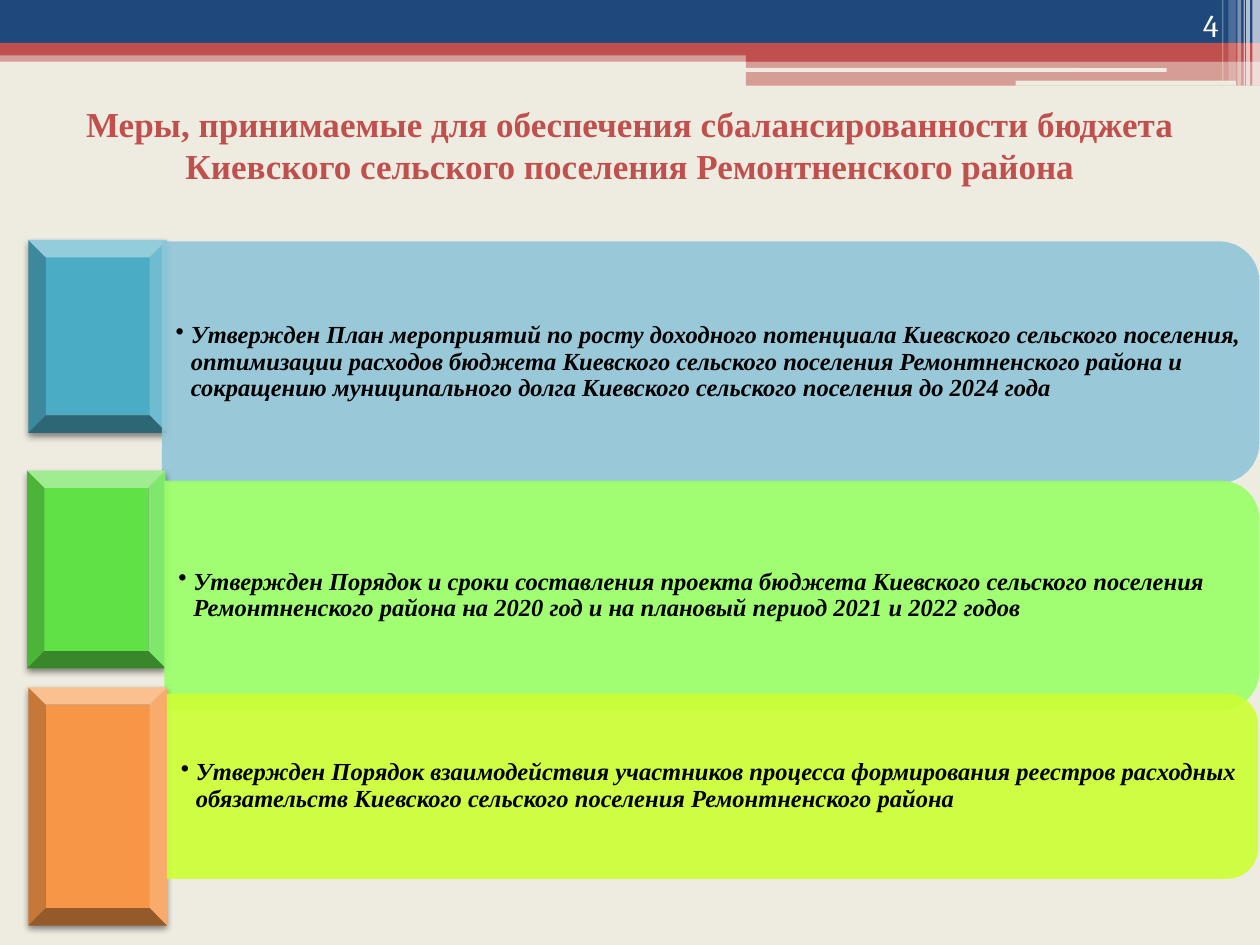
"""Build the slide on measures that keep the settlement budget balanced."""
from dataclasses import dataclass
from typing import NamedTuple

from lxml import etree
from pptx import Presentation
from pptx import util as u
from pptx.dml.color import RGBColor
from pptx.enum import shapes, text
from pptx.oxml import ns

COLUMNS, ROWS = 100, 75
SLIDE_WIDTH, SLIDE_HEIGHT = u.Inches(10), u.Inches(7.5)
Kind = shapes.MSO_SHAPE


class Area(NamedTuple):
    """Left, top, width and height in grid columns and rows."""
    left: float
    top: float
    width: float
    height: float

    def turned(self) -> "Area":
        """Swap the sides around the same centre."""
        shift = (self.width - self.height) / 2
        return Area(self.left + shift, self.top - shift, self.height, self.width)

    def emu(self) -> tuple[int, int, int, int]:
        """Convert grid units to slide lengths."""
        column, row = SLIDE_WIDTH / COLUMNS, SLIDE_HEIGHT / ROWS
        return (round(self.left * column), round(self.top * row),
                round(self.width * column), round(self.height * row))


@dataclass(frozen=True)
class Theme:
    """Colours, fonts and type sizes."""
    paper: str = "EEECE1"
    navy: str = "1F497D"
    red: str = "C0504D"
    white: str = "FFFFFF"
    black: str = "000000"
    serif: str = "Times New Roman"
    number_font: str = "Cambria"
    title_size: int = 20
    number_size: int = 18
    body_size: int = 14


THEME = Theme()


@dataclass(frozen=True)
class Bar:
    """One flat piece of the header."""
    area: Area
    color: str
    opacity: int = 100
    kind: Kind = Kind.RECTANGLE


@dataclass(frozen=True)
class Measure:
    """One bevelled tile with its panel and wording."""
    tile: Area
    tile_color: str
    panel: Area
    panel_color: str
    wording: str


HEADER = [
    Bar(Area(0, 4, 100, 0.9), THEME.red, 50),
    Bar(Area(0, 0, 100, 3.4), THEME.navy),
    Bar(Area(0, 3.4, 100, 1), THEME.red),
    Bar(Area(59.2, 3.9, 40.8, 1), THEME.red),
    Bar(Area(59.2, 4.8, 40.8, 2), THEME.red, 50),
    Bar(Area(59.1, 5.4, 33.5, 0.3), THEME.paper, kind=Kind.ROUNDED_RECTANGLE),
    Bar(Area(80.6, 6.4, 17.5, 0.4), THEME.paper, kind=Kind.ROUNDED_RECTANGLE),
] + [
    Bar(Area(left, 0, width, height), THEME.white, opacity)
    for left, width, height, opacity in [
        (99.4, 0.6, 6.8, 65), (98.9, 0.3, 6.8, 65), (98.7, 0.1, 6.8, 60),
        (98.2, 0.3, 6.8, 40), (97.5, 0.6, 6.4, 20), (97, 0.1, 6.4, 30)]
]

MEASURES = [
    Measure(Area(2.25, 19.05, 11, 15.3), "4BACC6", Area(12.85, 19.15, 87.1, 19.2), "90C5D8",
            "Утвержден План мероприятий по росту доходного потенциала Киевского сельского "
            "поселения, оптимизации расходов бюджета Киевского сельского поселения "
            "Ремонтненского района и сокращению муниципального долга Киевского сельского "
            "поселения до 2024 года"),
    Measure(Area(2.15, 37.35, 11, 15.7), "60E146", Area(13.05, 38.15, 86.9, 18.2), "99FF66",
            "Утвержден Порядок и сроки составления проекта бюджета Киевского сельского "
            "поселения Ремонтненского района на 2020 год и на плановый период 2021 и "
            "2022 годов"),
    Measure(Area(2.25, 54.55, 11, 18.9), "F79646", Area(13.25, 55.05, 86.6, 14.7), "CCFF33",
            "Утвержден Порядок взаимодействия участников процесса формирования реестров "
            "расходных обязательств Киевского сельского поселения Ремонтненского района"),
]


def add_block(page, kind: Kind, area: Area, color: str, opacity: int = 100, turn: int = 0):
    """Draw a borderless filled shape; turned shapes keep the visible area."""
    block = page.shapes.add_shape(kind, *(area.turned() if turn else area).emu())
    block.rotation = turn
    block.shadow.inherit = False
    block.line.fill.background()
    block.fill.solid()
    block.fill.fore_color.rgb = RGBColor.from_string(color)
    if opacity < 100:
        tint = block.fill._xPr.find(".//" + ns.qn("a:srgbClr"))
        etree.SubElement(tint, ns.qn("a:alpha"), val=str(opacity * 1000))
    return block


def add_drop_shadow(block) -> None:
    """Give a shape a soft shadow straight below it."""
    effects = block.element.spPr.find(ns.qn("a:effectLst"))
    shadow = etree.SubElement(effects, ns.qn("a:outerShdw"), blurRad=str(u.Pt(4)),
                              dist=str(u.Pt(2)), dir="5400000", rotWithShape="0")
    tint = etree.SubElement(shadow, ns.qn("a:srgbClr"), val=THEME.black)
    etree.SubElement(tint, ns.qn("a:alpha"), val="45000")


def write(box, wording: str, *, size: int, color: str, font: str = THEME.serif,
          bold: bool = False, italic: bool = False, bullet: bool = False,
          align=text.PP_ALIGN.LEFT, anchor=text.MSO_ANCHOR.TOP):
    """Put one formatted paragraph in a box."""
    frame = box.text_frame
    frame.word_wrap = True
    frame.auto_size = text.MSO_AUTO_SIZE.NONE
    frame.vertical_anchor = anchor
    para = frame.paragraphs[0]
    para.alignment = align
    if bullet:
        props = para._p.get_or_add_pPr()
        props.set("marL", str(u.Inches(0.12)))
        props.set("indent", str(u.Inches(-0.12)))
        etree.SubElement(props, ns.qn("a:buChar"), char="•")
        para.line_spacing = 0.9
        para.space_after = u.Pt(2)
    span = para.add_run()
    span.text = wording
    span.font.name, span.font.size = font, u.Pt(size)
    span.font.bold, span.font.italic = bold, italic
    span.font.color.rgb = RGBColor.from_string(color)
    return frame


def add_measure(page, measure: Measure) -> None:
    """Draw a tile, its panel and the bulleted wording."""
    add_drop_shadow(add_block(page, Kind.BEVEL, measure.tile, measure.tile_color, turn=90))
    panel = measure.panel
    add_block(page, Kind.ROUND_2_SAME_RECTANGLE, panel, measure.panel_color, 90, turn=90)
    inset = panel.height * 0.05
    inner = Area(panel.left, panel.top + inset, panel.width - inset, panel.height - 2 * inset)
    box = page.shapes.add_textbox(*inner.emu())
    frame = write(box, measure.wording, size=THEME.body_size, color=THEME.black, bold=True,
                  italic=True, bullet=True, anchor=text.MSO_ANCHOR.MIDDLE)
    frame.margin_left = u.Inches(0.11)
    frame.margin_top = frame.margin_right = frame.margin_bottom = u.Inches(0.01)


def main() -> None:
    """Assemble and save the deck."""
    deck = Presentation()
    deck.slide_width, deck.slide_height = SLIDE_WIDTH, SLIDE_HEIGHT
    page = deck.slides.add_slide(deck.slide_layouts[5])
    page.background.fill.solid()
    page.background.fill.fore_color.rgb = RGBColor.from_string(THEME.paper)
    for bar in HEADER:
        add_block(page, bar.kind, bar.area, bar.color, bar.opacity)
    number = page.shapes.add_textbox(*Area(89.4, 0, 8.3, 4).emu())
    write(number, "4", size=THEME.number_size, color=THEME.white, font=THEME.number_font,
          align=text.PP_ALIGN.RIGHT, anchor=text.MSO_ANCHOR.BOTTOM)
    for measure in MEASURES:
        add_measure(page, measure)
    title = page.shapes.title
    title.left, title.top, title.width, title.height = Area(0, 7.6, 100, 7.7).emu()
    write(title, "Меры, принимаемые для обеспечения сбалансированности бюджета "
          "Киевского сельского поселения Ремонтненского района", size=THEME.title_size,
          color=THEME.red, bold=True, align=text.PP_ALIGN.CENTER)
    deck.save("out.pptx")


if __name__ == "__main__":
    main()
